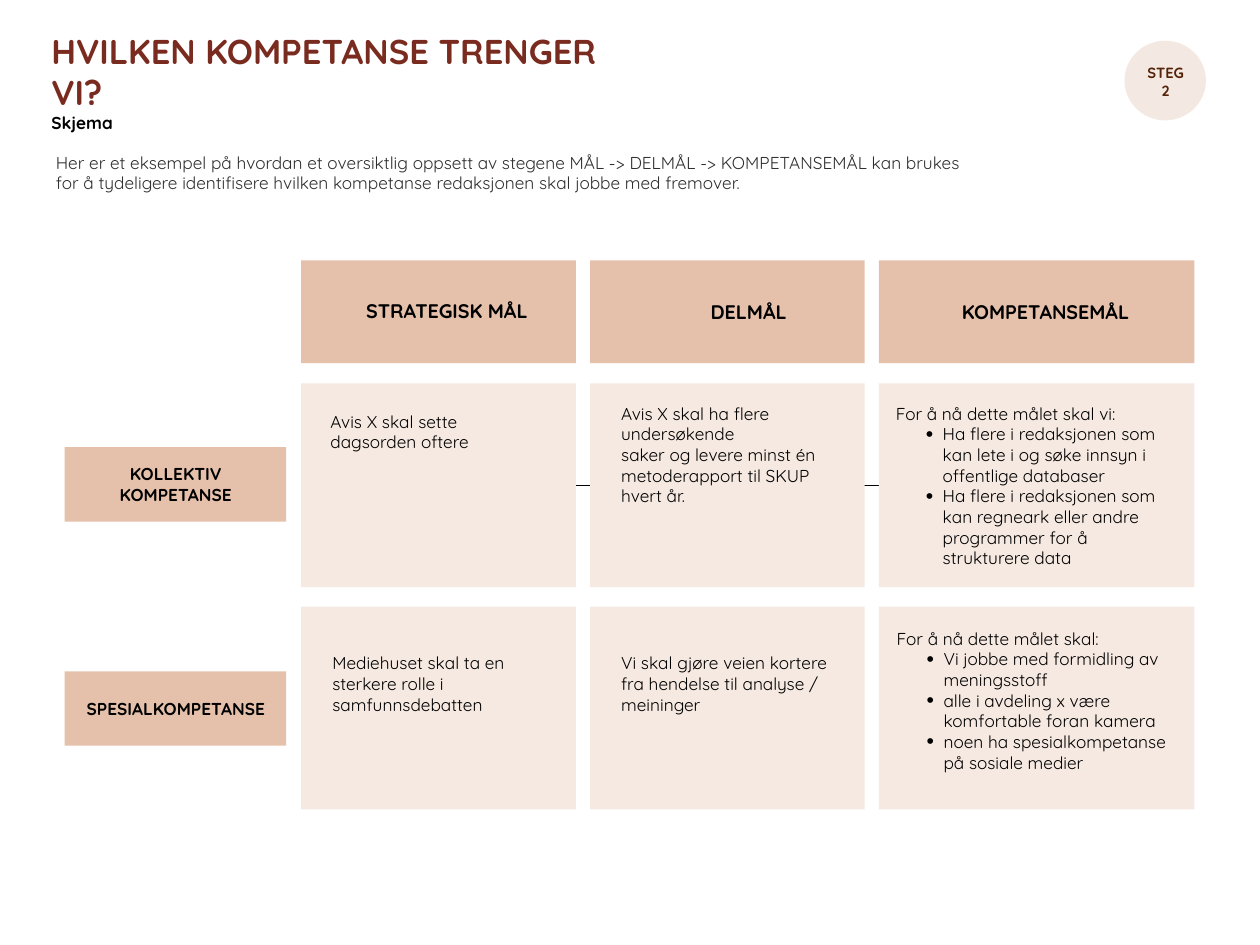
from dataclasses import dataclass

import pptx
import pptx.dml.color
import pptx.enum.shapes
import pptx.enum.text
import pptx.oxml.ns
import pptx.util
from lxml import etree

EMU_PER_PX = 9144  # 100 px to the inch
ALIGN = pptx.enum.text.PP_ALIGN
ANCHOR = pptx.enum.text.MSO_ANCHOR
SHAPE = pptx.enum.shapes.MSO_SHAPE


@dataclass(frozen=True)
class Theme:
    font: str = "Quicksand"
    black: str = "000000"
    grey: str = "2F2F2F"
    title_red: str = "7A2B1F"
    step_brown: str = "55220A"
    step_fill: str = "F3E9E2"
    heading_fill: str = "E5C1AC"
    card_fill: str = "F5E9E1"
    title_size: int = 28
    heading_size: int = 16
    body_size: int = 14
    step_size: int = 12
    inset: int = 6
    bullet_margin: int = 53
    bullet_hang: int = 19


@dataclass(frozen=True)
class Run:
    text: str
    size: int
    color: str = Theme.black
    bold: bool = False


def px(length):
    return pptx.util.Emu(length * EMU_PER_PX)


def rgb(color):
    return pptx.dml.color.RGBColor.from_string(color)


class SlideBuilder:
    def __init__(self, slide, theme):
        self.slide = slide
        self.theme = theme

    def block(self, left, top, width, height, fill, kind=SHAPE.RECTANGLE):
        shape = self.slide.shapes.add_shape(kind, px(left), px(top), px(width), px(height))
        shape.shadow.inherit = False
        shape.fill.solid()
        shape.fill.fore_color.rgb = rgb(fill)
        shape.line.fill.background()

    def line(self, left, right, y):
        connector = self.slide.shapes.add_connector(
            pptx.enum.shapes.MSO_CONNECTOR.STRAIGHT, px(left), px(y), px(right), px(y))
        connector.line.color.rgb = rgb(self.theme.black)
        connector.line.width = pptx.util.Pt(1)
        etree.SubElement(connector._element.spPr, pptx.oxml.ns.qn("a:effectLst"))

    def text(self, box, runs, align=ALIGN.LEFT, anchor=ANCHOR.TOP, bullets_from=None):
        """Fill a text box with one paragraph per run; bullets start at an index."""
        frame = self.slide.shapes.add_textbox(*map(px, box)).text_frame
        frame.word_wrap = True
        frame.vertical_anchor = anchor
        frame.margin_left = frame.margin_right = px(self.theme.inset)
        frame.margin_top = frame.margin_bottom = px(self.theme.inset)
        for index, content in enumerate(runs):
            paragraph = frame.paragraphs[0] if index == 0 else frame.add_paragraph()
            paragraph.alignment = align
            if bullets_from is not None and index >= bullets_from:
                self.bullet(paragraph)
            for number, part in enumerate(content.text.split("\n")):
                if number:
                    paragraph.add_line_break()
                run = paragraph.add_run()
                run.text = part
                run.font.name = self.theme.font
                run.font.size = pptx.util.Pt(content.size)
                run.font.bold = content.bold
                run.font.color.rgb = rgb(content.color)

    def bullet(self, paragraph):
        properties = paragraph._p.get_or_add_pPr()
        properties.set("marL", str(px(self.theme.bullet_margin)))
        properties.set("indent", str(-px(self.theme.bullet_hang)))
        for tag, key, value in (("a:buSzPct", "val", "123000"),
                                ("a:buFont", "typeface", "Arial"),
                                ("a:buChar", "char", "•")):
            etree.SubElement(properties, pptx.oxml.ns.qn(tag)).set(key, value)

    def heading(self, box, text, size):
        self.text(box, [Run(text, size, bold=True)], ALIGN.CENTER)

    def body(self, box, lines, bullets_from=None):
        self.text(box, [Run(line, self.theme.body_size) for line in lines],
                  bullets_from=bullets_from)


COLUMN_LEFT, COLUMN_STEP = 340, 326
COLUMN_WIDTHS = (310, 310, 356)
HEADING_ROW = (294, 116)
CARD_ROWS = ((433, 230), (685, 229))

COLUMN_HEADINGS = (
    ((406, 331, 197, 40), "STRATEGISK MÅL"),
    ((775, 333, 140, 40), "DELMÅL"),
    ((1074, 333, 212, 40), "KOMPETANSEMÅL"),
)
ROW_LABELS = (
    (505, (85, 517, 227, 60), "KOLLEKTIV KOMPETANSE"),
    (758, (49, 783, 299, 54), "SPESIALKOMPETANSE"),
)
CARD_TEXTS = (
    ((367, 458, 255, 158), ["Avis X skal sette dagsorden oftere"]),
    ((695, 449, 255, 158), ["Avis X skal ha flere undersøkende",
                            "saker og levere minst én",
                            "metoderapport til SKUP hvert år."]),
    ((369, 731, 212, 158), ["Mediehuset skal ta en sterkere rolle i samfunnsdebatten"]),
    ((695, 731, 255, 158), ["Vi skal gjøre veien kortere fra hendelse til analyse / meininger"]),
)
GOAL_TEXTS = (
    ((1005, 449, 330, 231), [
        "For å nå dette målet skal vi:",
        "Ha flere i redaksjonen som kan lete i og søke innsyn i offentlige databaser",
        "Ha flere i redaksjonen som kan regneark eller andre programmer for å strukturere data"]),
    ((1006, 703, 330, 255), [
        "For å nå dette målet skal:",
        "Vi jobbe med formidling av meningsstoff",
        "alle i avdeling x være komfortable foran kamera",
        "noen ha spesialkompetanse på sosiale medier"]),
)


def main():
    presentation = pptx.Presentation()
    presentation.slide_width, presentation.slide_height = px(1422), px(1067)
    theme = Theme()
    builder = SlideBuilder(presentation.slides.add_slide(presentation.slide_layouts[6]), theme)

    # Title and introduction
    builder.text((52, 22, 682, 140), [
        Run("HVILKEN KOMPETANSE TRENGER VI?", theme.title_size, theme.title_red, True),
        Run("Skjema", theme.body_size, bold=True)], anchor=ANCHOR.MIDDLE)
    builder.text((57, 160, 1083, 70), [Run(
        "Her er et eksempel på hvordan et oversiktlig oppsett av stegene "
        "MÅL -> DELMÅL -> KOMPETANSEMÅL kan brukes\n"
        "for å tydeligere identifisere hvilken kompetanse redaksjonen skal jobbe med fremover.",
        theme.body_size, theme.grey)], anchor=ANCHOR.MIDDLE)

    # Step badge
    builder.block(1269, 46, 92, 90, theme.step_fill, SHAPE.OVAL)
    builder.text((1283, 62, 65, 60), [Run("STEG 2", theme.step_size, theme.step_brown, True)],
                 ALIGN.CENTER, ANCHOR.MIDDLE)

    # Grid of headings and cards, with the line behind the cards
    builder.line(623, 1050, 548)
    for column, width in enumerate(COLUMN_WIDTHS):
        left = COLUMN_LEFT + column * COLUMN_STEP
        builder.block(left, HEADING_ROW[0], width, HEADING_ROW[1], theme.heading_fill)
        for top, height in CARD_ROWS:
            builder.block(left, top, width, height, theme.card_fill)

    # Headings and row labels
    for box, text in COLUMN_HEADINGS:
        builder.heading(box, text, theme.heading_size)
    for top, box, text in ROW_LABELS:
        builder.block(73, top, 250, 84, theme.heading_fill)
        builder.heading(box, text, theme.body_size)

    # Card texts
    for box, lines in CARD_TEXTS:
        builder.body(box, lines)
    for box, lines in GOAL_TEXTS:
        builder.body(box, lines, bullets_from=1)

    presentation.save("out.pptx")


if __name__ == "__main__":
    main()
